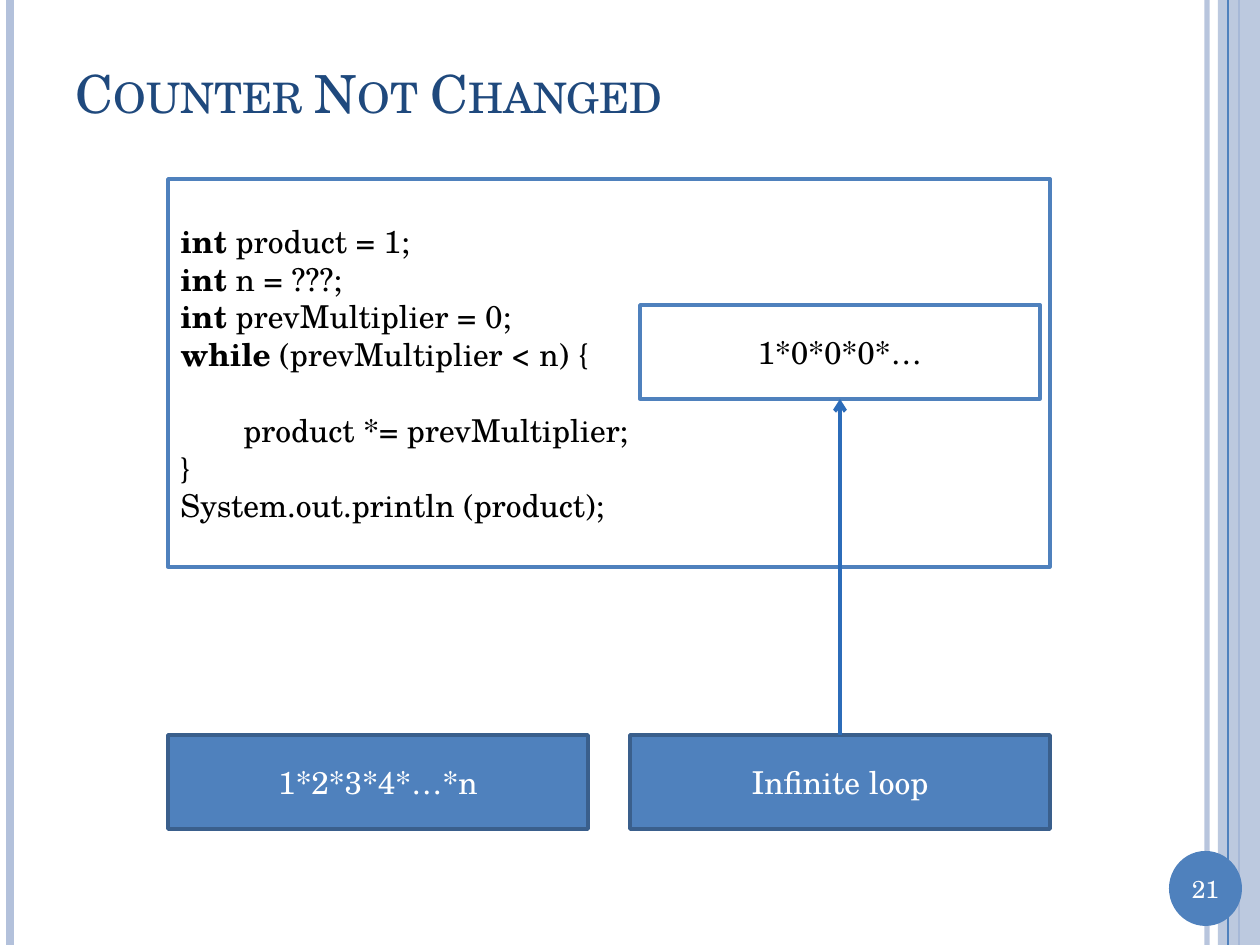
from pptx import Presentation
from pptx.dml.color import RGBColor as RGB
from pptx.enum.shapes import MSO_CONNECTOR as CONNECTOR, MSO_SHAPE as SHAPE
from pptx.enum.text import MSO_ANCHOR as ANCHOR, PP_ALIGN as ALIGN
from pptx.oxml.ns import qn
from pptx.util import Pt
from lxml.etree import SubElement

PX = 914400 / 126
FONT = "TeX Gyre Schola"
COLORS = {
    "white": "FFFFFF", "black": "000000", "navy": "1F497D", "blue": "4F81BD",
    "pale": "B3C1DB", "edge": "3A5F8C", "arrow": "2C6CB9",
}

prs = Presentation()
prs.slide_width, prs.slide_height = round(1260 * PX), round(945 * PX)
slide = prs.slides.add_slide(prs.slide_layouts[5])
shapes = slide.shapes


def add_block(kind, box, fill, edge=None):
    block = shapes.add_shape(kind, *[round(v * PX) for v in box])
    block.shadow.inherit = False
    block.fill.solid()
    block.fill.fore_color.rgb = RGB.from_string(COLORS[fill])
    if edge:
        block.line.color.rgb = RGB.from_string(COLORS[edge])
        block.line.width = Pt(2)
    else:
        block.line.fill.background()
    return block


def add_rule(start, end, color, width):
    rule = shapes.add_connector(CONNECTOR.STRAIGHT, *[round(v * PX) for v in start + end])
    rule.line.color.rgb = RGB.from_string(COLORS[color])
    rule.line.width = Pt(width)
    SubElement(rule._element.spPr, qn("a:effectLst"))
    return rule


rules = [add_rule((x, 0), (x, 945), color, width) for x, color, width in
         [(1207, "pale", 3), (10, "pale", 4.5), (1239, "blue", 1.5)]]
band = add_block(SHAPE.RECTANGLE, (1218, 0, 42, 945), "pale")
add_rule((1228, 0), (1228, 945), "blue", 0.75)
for part, opacity in [(rules[0], 93), (band, 87)]:
    tint = next(part._element.spPr.iter(qn("a:srgbClr")))
    SubElement(tint, qn("a:alpha"), val=str(opacity * 1000))

add_block(SHAPE.OVAL, (1169, 851, 73, 75), "blue")
page_number = shapes.add_textbox(*[round(v * PX) for v in (1169, 867, 73, 43)])
page_number.text_frame.word_wrap = True
page_number.text_frame.text = "21"

title = shapes.title
title.left, title.top, title.width, title.height = [round(v * PX) for v in (63, 38, 1092, 109)]
title.text_frame.text = "Counter Not Changed"

code_panel = add_block(SHAPE.RECTANGLE, (168, 179, 882, 388), "white", "blue")
code_lines = [
    ("int", " product = 1;"),
    ("int", " n = ???;"),
    ("int", " prevMultiplier = 0;"),
    ("while", " (prevMultiplier < n) {"),
    ("", "\tproduct *= prevMultiplier;"),
    ("", "}"),
    ("", "System.out.println (product);"),
]
code = code_panel.text_frame
for i, (keyword, rest) in enumerate(code_lines):
    line = code.paragraphs[0] if i == 0 else code.add_paragraph()
    if keyword:
        keyword_run = line.add_run()
        keyword_run.text = keyword
        keyword_run.font.bold = True
    line.add_run().text = rest
code.paragraphs[4].space_before = Pt(21.6)

expected = add_block(SHAPE.RECTANGLE, (168, 735, 420, 94), "blue", "edge")
actual = add_block(SHAPE.RECTANGLE, (640, 305, 400, 94), "white", "blue")
verdict = add_block(SHAPE.RECTANGLE, (630, 735, 420, 94), "blue", "edge")
expected.text_frame.text = "1*2*3*4*…*n"
actual.text_frame.text = "1*0*0*0*…"
verdict.text_frame.text = "Infinite loop"

for part, size, color, align in [
    (page_number, 14, "white", ALIGN.CENTER),
    (title, 30, "navy", ALIGN.LEFT),
    (code_panel, 18, "black", ALIGN.LEFT),
    (expected, 18, "white", ALIGN.CENTER),
    (actual, 18, "black", ALIGN.CENTER),
    (verdict, 18, "white", ALIGN.CENTER),
]:
    part.text_frame.vertical_anchor = ANCHOR.MIDDLE
    for paragraph in part.text_frame.paragraphs:
        paragraph.alignment = align
        for run in paragraph.runs:
            run.font.name = FONT
            run.font.size = Pt(size)
            run.font.color.rgb = RGB.from_string(COLORS[color])
title.text_frame.paragraphs[0].runs[0].font._element.set("cap", "small")

arrow = add_rule((840, 735), (840, 399), "arrow", 2.25)
arrow.begin_connect(verdict, 0)
arrow.end_connect(actual, 2)
SubElement(arrow.line._get_or_add_ln(), qn("a:tailEnd"), type="arrow")

prs.save("out.pptx")
